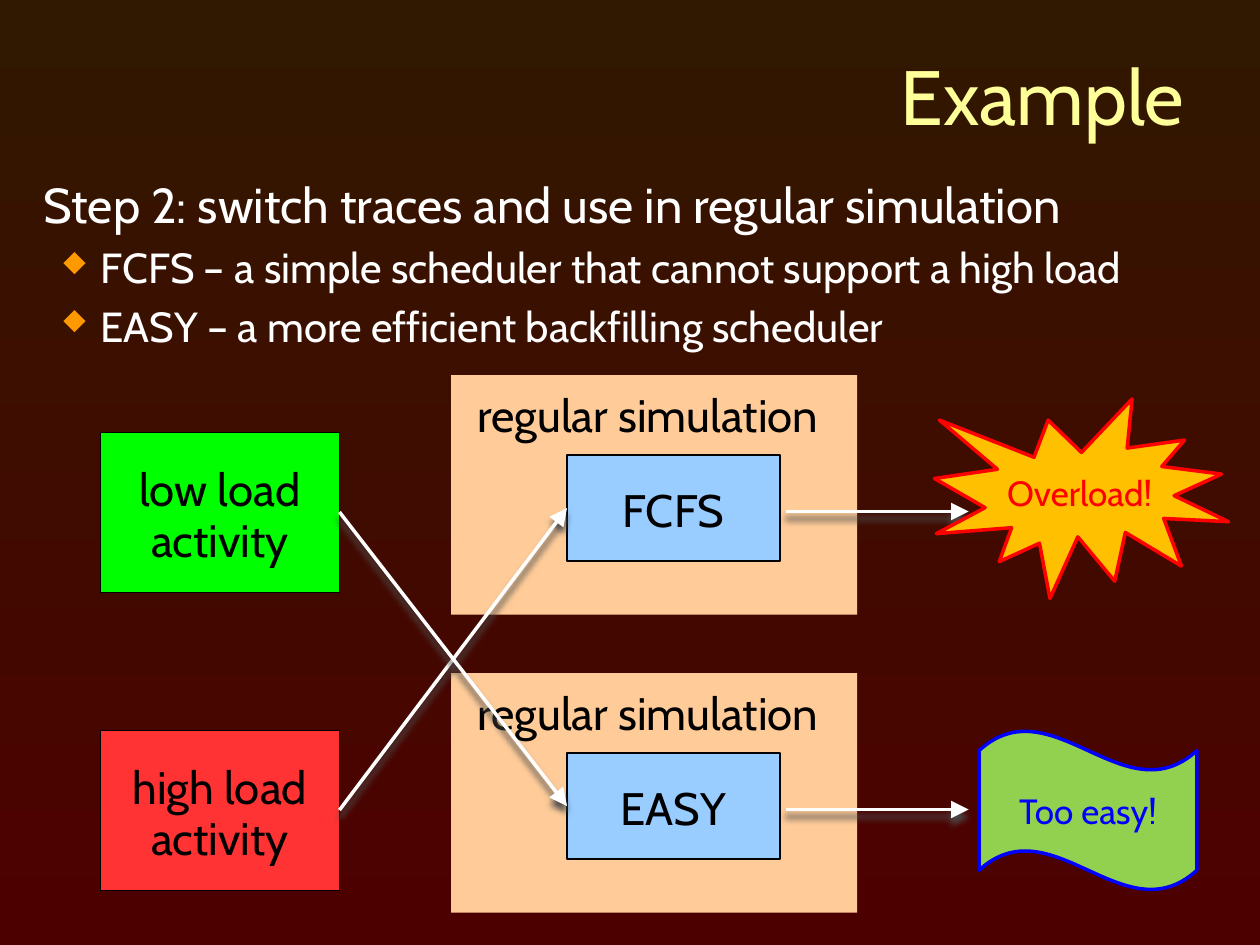
from lxml import etree
from pptx import Presentation
from pptx.dml.color import RGBColor
from pptx.enum import shapes, text
from pptx.oxml import ns
from pptx.util import Pt

FONT = "Cabin"
DARK = RGBColor(0x31, 0x18, 0x00)
MAROON = RGBColor(0x4D, 0x00, 0x00)
CREAM = RGBColor(0xFF, 0xFF, 0x99)
WHITE = RGBColor(0xFF, 0xFF, 0xFF)
BLACK = RGBColor(0x00, 0x00, 0x00)
GREEN = RGBColor(0x00, 0xFF, 0x00)
CORAL = RGBColor(0xFF, 0x33, 0x33)
PEACH = RGBColor(0xFF, 0xCC, 0x99)
SKY = RGBColor(0x99, 0xCC, 0xFF)
GOLD = RGBColor(0xFF, 0xC0, 0x00)
RED = RGBColor(0xFF, 0x00, 0x00)
LIME = RGBColor(0x92, 0xD0, 0x50)
BLUE = RGBColor(0x00, 0x00, 0xFF)
ORANGE = RGBColor(0xFF, 0x99, 0x00)
GRAY = RGBColor(0x4D, 0x4D, 0x4D)

KIND = shapes.MSO_SHAPE
LEFT, MID, RIGHT = text.PP_ALIGN.LEFT, text.PP_ALIGN.CENTER, text.PP_ALIGN.RIGHT
TOP, CENTER = text.MSO_ANCHOR.TOP, text.MSO_ANCHOR.MIDDLE
STEP = 170.3  # distance between the two rows


def put(obj, **vals):
    for name, val in vals.items():
        setattr(obj, name, val)


def sub(parent, tag, **vals):
    return etree.SubElement(parent, ns.qn(tag), {k: str(v) for k, v in vals.items()})


def write(par, words, size, color, **vals):
    run = par.add_run()
    run.text = words
    put(run.font, name=FONT, size=Pt(size))
    run.font.color.rgb = color
    put(par, **vals)


def bullet(par):
    props = par._p.get_or_add_pPr()
    for name, val in {"marL": Pt(32.4), "indent": Pt(-22.5)}.items():
        props.set(name, str(int(val)))
    sub(sub(props, "a:buClr"), "a:srgbClr", val=ORANGE)
    sub(props, "a:buSzPct", val=65000)
    # The letter u is a solid diamond in this symbol font
    sub(props, "a:buFont", typeface="Wingdings", pitchFamily=2, charset=2)
    sub(props, "a:buChar", char="u")


def block(slide, at, anchor=TOP):
    box = slide.shapes.add_textbox(*map(Pt, at))
    put(box.text_frame, word_wrap=True, vertical_anchor=anchor)
    return box.text_frame


def shape(slide, kind, at, fill, lines, size=26, color=BLACK,
          edge=None, width=1, align=MID, anchor=CENTER, pad=(3, 3)):
    item = slide.shapes.add_shape(kind, *map(Pt, at))
    item.shadow.inherit = False
    item.fill.solid()
    item.fill.fore_color.rgb = fill
    if edge is None:
        item.line.fill.background()
    else:
        item.line.color.rgb = edge
        item.line.width = Pt(width)
    frame = item.text_frame
    side, top = map(Pt, pad)
    put(frame, word_wrap=True, vertical_anchor=anchor, margin_left=side,
        margin_right=side, margin_top=top, margin_bottom=Pt(3))
    for i, words in enumerate(lines):
        par = frame.add_paragraph() if i else frame.paragraphs[0]
        write(par, words, size, color, alignment=align)
        if len(lines) > 1:
            par.line_spacing = Pt(28.8)
    return item


def arrow(slide, start, end):
    line = slide.shapes.add_connector(shapes.MSO_CONNECTOR.STRAIGHT,
                                      *map(Pt, start + end))
    line.line.color.rgb = WHITE
    line.line.width = Pt(2)
    sub(line.line._get_or_add_ln(), "a:tailEnd", type="triangle", w="lg", len="lg")
    shade = sub(sub(line._element.spPr, "a:effectLst"), "a:outerShdw",
                blurRad=int(Pt(4)), dist=int(Pt(4)), dir=5400000)
    sub(shade, "a:srgbClr", val=GRAY)
    return line


def join(slide, load, plan):
    line = arrow(slide, (0, 0), (1, 1))
    line.begin_connect(load, 3)
    line.end_connect(plan, 1)


def heading(slide):
    par = block(slide, (36, 18, 648, 72), CENTER).paragraphs[0]
    write(par, "Example", 44, CREAM, alignment=RIGHT)
    body = block(slide, (18, 96, 678, 138))
    write(body.paragraphs[0], "Step 2: switch traces and use in regular simulation",
          28, WHITE, space_before=Pt(5.6))
    for words in ("FCFS – a simple scheduler that cannot support a high load",
                  "EASY – a more efficient backfilling scheduler"):
        par = body.add_paragraph()
        write(par, words, 24, WHITE, space_before=Pt(4.8))
        bullet(par)


def main():
    deck = Presentation()
    put(deck, slide_width=Pt(720), slide_height=Pt(540))
    slide = deck.slides.add_slide(deck.slide_layouts[6])

    # Background
    back = slide.background.fill
    back.gradient()
    back.gradient_angle = 270
    for stop, color in zip(back.gradient_stops, (DARK, MAROON)):
        stop.color.rgb = color

    heading(slide)

    # Load boxes and simulation panels, one row each
    loads, plans = [], []
    rows = (("low load", GREEN, "FCFS"), ("high load", CORAL, "EASY"))
    for i, (load, fill, plan) in enumerate(rows):
        y = i * STEP
        loads.append(shape(slide, KIND.RECTANGLE, (57.5, 247 + y, 136.5, 91.2), fill,
                           (load, "activity"), edge=BLACK, width=0.25, pad=(3, 7.5)))
        shape(slide, KIND.RECTANGLE, (257.8, 214.4 + y, 232, 136.8), PEACH,
              ("regular simulation",), align=LEFT, anchor=TOP, pad=(15, 7))
        plans.append(shape(slide, KIND.RECTANGLE, (324, 260 + y, 121.7, 60.6), SKY,
                           (plan,), edge=BLACK, pad=(3, 5)))

    # Crossed traces, then the way to each result
    join(slide, loads[1], plans[0])
    join(slide, loads[0], plans[1])
    for i in range(2):
        y = 292.3 + i * STEP
        arrow(slide, (449, y), (553.5, y))

    # Results
    shape(slide, KIND.EXPLOSION1, (534, 228, 168, 114), GOLD, ("Overload!",),
          size=20, color=RED, edge=RED, width=2)
    shape(slide, KIND.WAVE, (559.5, 417.5, 124.5, 91.2), LIME, ("Too easy!",),
          size=20, color=BLUE, edge=BLUE, width=2)

    deck.save("out.pptx")


if __name__ == "__main__":
    main()
